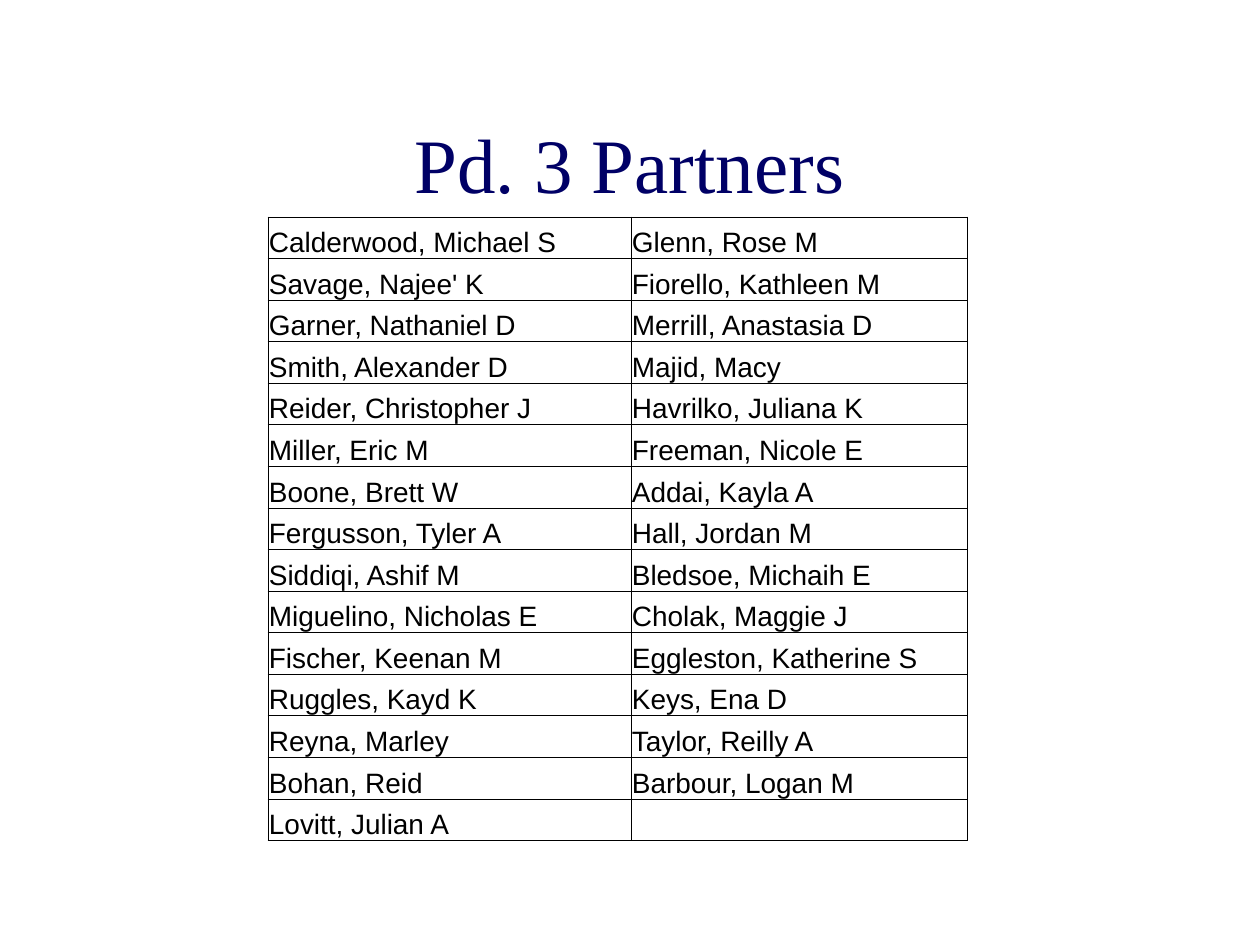
from lxml.etree import SubElement
from pptx import Presentation
from pptx.dml.color import RGBColor
from pptx.enum.text import MSO_ANCHOR, PP_ALIGN
from pptx.oxml.ns import qn
from pptx.util import Pt

PX = 914400 // 126
NAVY = RGBColor(0x00, 0x00, 0x66)
BLACK = RGBColor(0x00, 0x00, 0x00)
WHITE = RGBColor(0xFF, 0xFF, 0xFF)

PARTNERS = [
    ("Calderwood, Michael S", "Glenn, Rose M"),
    ("Savage, Najee' K", "Fiorello, Kathleen M"),
    ("Garner, Nathaniel D", "Merrill, Anastasia D"),
    ("Smith, Alexander D", "Majid, Macy"),
    ("Reider, Christopher J", "Havrilko, Juliana K"),
    ("Miller, Eric M", "Freeman, Nicole E"),
    ("Boone, Brett W", "Addai, Kayla A"),
    ("Fergusson, Tyler A", "Hall, Jordan M"),
    ("Siddiqi, Ashif M", "Bledsoe, Michaih E"),
    ("Miguelino, Nicholas E", "Cholak, Maggie J"),
    ("Fischer, Keenan M", "Eggleston, Katherine S"),
    ("Ruggles, Kayd K", "Keys, Ena D"),
    ("Reyna, Marley", "Taylor, Reilly A"),
    ("Bohan, Reid", "Barbour, Logan M"),
    ("Lovitt, Julian A", ""),
]
COLUMN_WIDTHS = (363, 336)
TABLE_HEIGHT = 624


def add_borders(cell):
    properties = cell._tc.get_or_add_tcPr()
    for side in ("a:lnL", "a:lnR", "a:lnT", "a:lnB"):
        line = SubElement(properties, qn(side), w=str(Pt(0.5)))
        fill = SubElement(line, qn("a:solidFill"))
        SubElement(fill, qn("a:srgbClr"), val=str(BLACK))


presentation = Presentation()
presentation.slide_width = 1260 * PX
presentation.slide_height = 945 * PX
slide = presentation.slides.add_slide(presentation.slide_layouts[5])

title = slide.shapes.title
title.left, title.top, title.width, title.height = 94 * PX, 84 * PX, 1071 * PX, 158 * PX
title.text_frame.text = "Pd. 3 Partners"
title.text_frame.vertical_anchor = MSO_ANCHOR.MIDDLE
paragraph = title.text_frame.paragraphs[0]
paragraph.alignment = PP_ALIGN.CENTER
font = paragraph.runs[0].font
font.name, font.size = "Times New Roman", Pt(44)
font.color.rgb = NAVY

table = slide.shapes.add_table(
    len(PARTNERS), len(COLUMN_WIDTHS),
    268 * PX, 217 * PX, sum(COLUMN_WIDTHS) * PX, TABLE_HEIGHT * PX,
).table
table.first_row = table.horz_banding = False
for column, width in zip(table.columns, COLUMN_WIDTHS):
    column.width = width * PX

for row, names in zip(table.rows, PARTNERS):
    row.height = TABLE_HEIGHT * PX // len(PARTNERS)
    for cell, name in zip(row.cells, names):
        add_borders(cell)
        cell.fill.solid()
        cell.fill.fore_color.rgb = WHITE
        cell.vertical_anchor = MSO_ANCHOR.BOTTOM
        cell.margin_left = cell.margin_right = cell.margin_top = PX
        cell.margin_bottom = 0
        cell.text_frame.text = name
        for run in cell.text_frame.paragraphs[0].runs:
            run.font.name, run.font.size = "Arial", Pt(16)
            run.font.color.rgb = BLACK

presentation.save("out.pptx")
